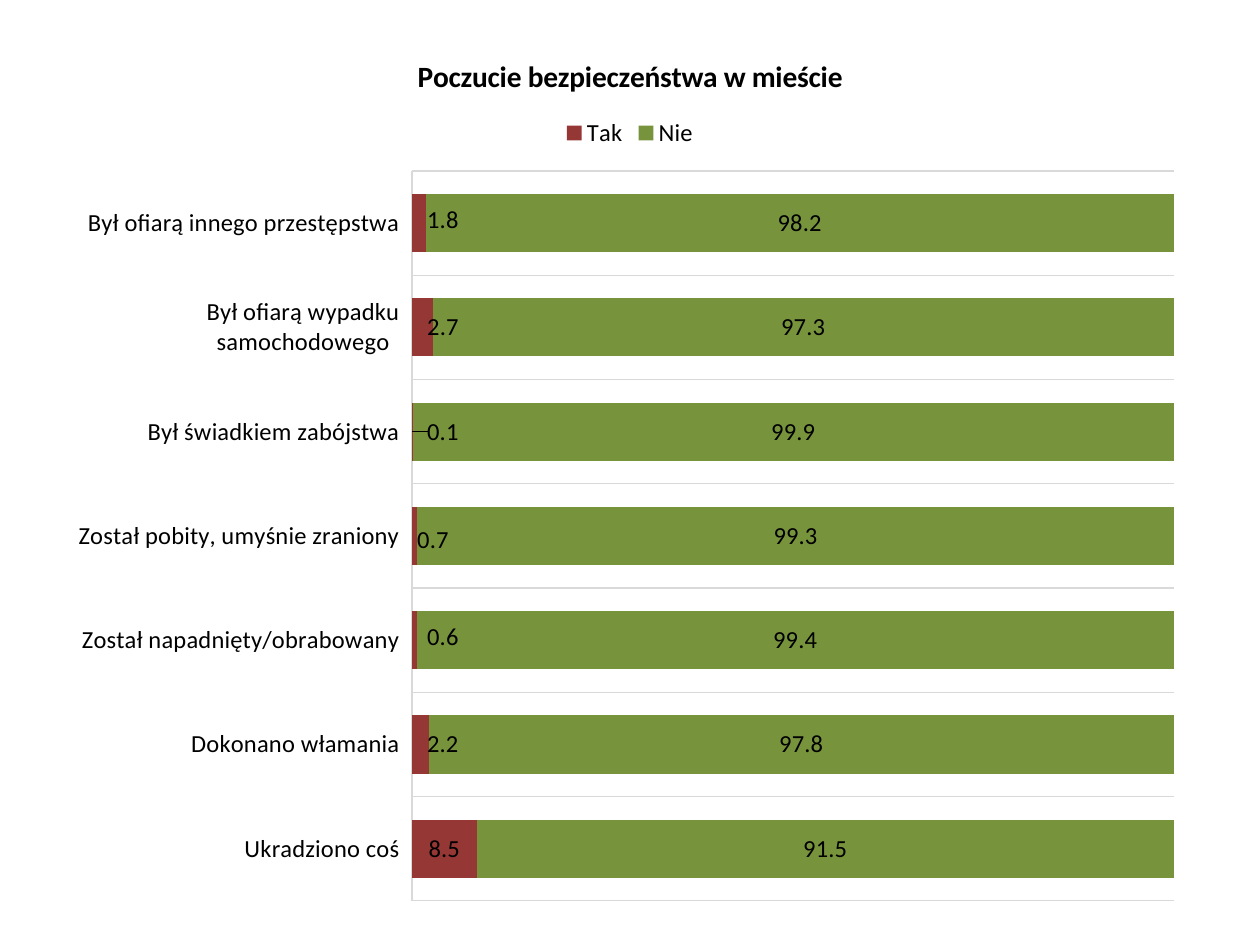
from lxml import etree
from pptx import Presentation
from pptx.chart.data import CategoryChartData
from pptx.dml.color import RGBColor
from pptx.enum.chart import (XL_CHART_TYPE, XL_LABEL_POSITION,
                             XL_LEGEND_POSITION, XL_TICK_LABEL_POSITION,
                             XL_TICK_MARK)
from pptx.oxml.ns import qn
from pptx.util import Emu, Pt

# Content: answers in percent, from the bottom bar up
TITLE = "Poczucie bezpieczeństwa w mieście"
ANSWERS = [
    ("Ukradziono coś", 8.5, 91.5),
    ("Dokonano włamania", 2.2, 97.8),
    ("Został napadnięty/obrabowany", 0.6, 99.4),
    ("Został pobity, umyśnie zraniony", 0.7, 99.3),
    ("Był świadkiem zabójstwa", 0.1, 99.9),
    ("Był ofiarą wypadku samochodowego", 2.7, 97.3),
    ("Był ofiarą innego przestępstwa", 1.8, 98.2),
]
# Centre x and vertical shift, in px, of the moved "Tak" labels
MOVED_LABELS = {1: (443, 0), 2: (443, -3), 3: (433, 4),
                4: (443, 0), 5: (443, 0), 6: (443, -3)}

BLACK = RGBColor(0x00, 0x00, 0x00)
GREY = RGBColor(0xD9, 0xD9, 0xD9)
RED = RGBColor(0x95, 0x37, 0x35)
GREEN = RGBColor(0x77, 0x93, 0x3C)
FONT = "Calibri"

# Frames in px: left, top, width, height
SCALE = 914400 // 126
CHART = (63, 26, 1134, 893)
PLOT = (412, 171, 762, 730)


def px(n):
    return Emu(n * SCALE)


def set_font(font, size=14, bold=False):
    font.name, font.size, font.bold = FONT, Pt(size), bold
    font.color.rgb = BLACK


def grey_line(line):
    line.color.rgb = GREY
    line.width = Pt(0.75)


def manual_layout(**values):
    layout = etree.Element(qn("c:layout"))
    manual = etree.SubElement(layout, qn("c:manualLayout"))
    for name, value in values.items():
        etree.SubElement(manual, qn("c:" + name)).set("val", str(value))
    return layout


prs = Presentation()
prs.slide_width, prs.slide_height = px(1260), px(945)
s = prs.slides.add_slide(prs.slide_layouts[6])

# Chart
cats, yes, no = zip(*ANSWERS)
data = CategoryChartData(number_format="0.0")
data.categories = cats
data.add_series("Tak", yes)
data.add_series("Nie", no)
chart = s.shapes.add_chart(XL_CHART_TYPE.BAR_STACKED_100,
                           *map(px, CHART), data).chart
set_font(chart.font)

# Title and legend
chart.has_title = True
tf = chart.chart_title.text_frame
tf.text = TITLE
set_font(tf.paragraphs[0].font, 16.8, True)
chart.has_legend = True
chart.legend.position = XL_LEGEND_POSITION.TOP
chart.legend.include_in_layout = False
set_font(chart.legend.font)

# Axes
axis = chart.category_axis
axis.major_tick_mark = axis.minor_tick_mark = XL_TICK_MARK.NONE
axis.tick_label_position = XL_TICK_LABEL_POSITION.LOW
axis.has_major_gridlines = True
grey_line(axis.format.line)
grey_line(axis.major_gridlines.format.line)
set_font(axis.tick_labels.font)
chart.value_axis.has_major_gridlines = False
chart.value_axis.visible = False

# Bars and value labels
plot = chart.plots[0]
plot.gap_width, plot.overlap = 79, 100
plot.vary_by_categories = False
for series, color in zip(plot.series, (RED, GREEN)):
    series.format.fill.solid()
    series.format.fill.fore_color.rgb = color
    labels = series.data_labels
    labels.show_value = True
    labels.position = XL_LABEL_POSITION.CENTER
    labels.number_format, labels.number_format_is_linked = "0.0", False
    set_font(labels.font)

# Shift the labels that do not fit inside their narrow bars
tak = plot.series[0]
for i, (center, dy) in MOVED_LABELS.items():
    label = tak.points[i].data_label
    set_font(label.font)
    label.position = XL_LABEL_POSITION.CENTER
    bar_center = PLOT[0] + PLOT[2] * yes[i] / 200
    idx = tak.data_labels._element.xpath(f"c:dLbl/c:idx[@val='{i}']")[0]
    idx.addnext(manual_layout(x=round((center - bar_center) / CHART[2], 4),
                              y=round(dy / CHART[3], 4)))

# Inner plot area
area = chart._chartSpace.chart.plotArea
for old in area.findall(qn("c:layout")):
    area.remove(old)
area.insert(0, manual_layout(
    layoutTarget="inner", xMode="edge", yMode="edge",
    x=round((PLOT[0] - CHART[0]) / CHART[2], 4),
    y=round((PLOT[1] - CHART[1]) / CHART[3], 4),
    w=round(PLOT[2] / CHART[2], 4), h=round(PLOT[3] / CHART[3], 4)))

prs.save("out.pptx")
